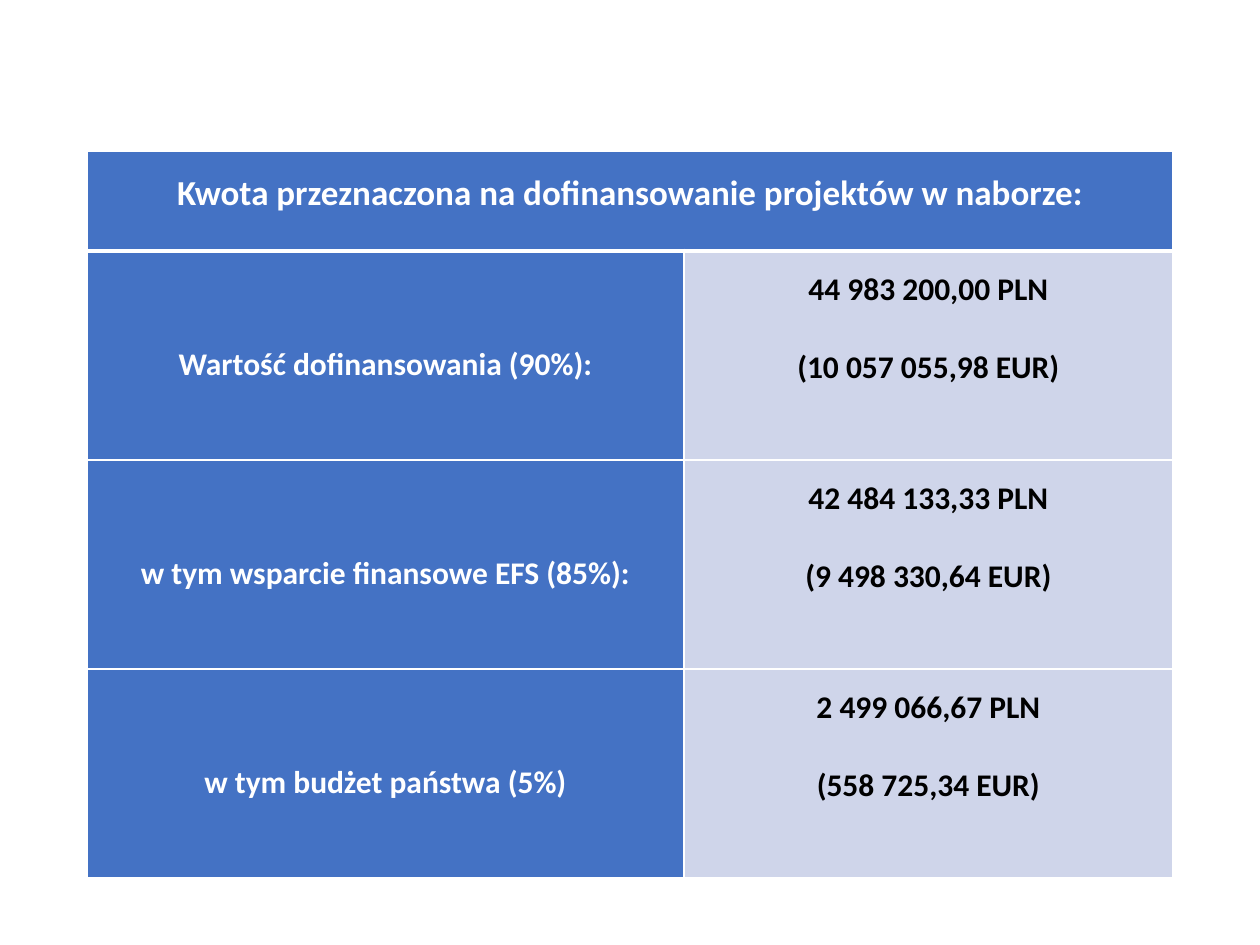
from lxml import etree
from pptx import Presentation
from pptx import util as u
from pptx.dml.color import RGBColor
from pptx.enum import text
from pptx.oxml.ns import qn

SCALE = 914400 // 126
WHITE, BLACK, BLUE, PALE = "FFFFFF", "000000", "4472C4", "CFD5EA"
LEFT, TOP = 87, 151
COLUMNS = [597, 489]
ROWS = [100, 209, 209, 209]
HEADING = "Kwota przeznaczona na dofinansowanie projektów w naborze:"
AMOUNTS = [
    ("Wartość dofinansowania (90%):", "44 983 200,00 PLN", "(10 057 055,98 EUR)"),
    ("w tym wsparcie finansowe EFS (85%):", "42 484 133,33 PLN", "(9 498 330,64 EUR)"),
    ("w tym budżet państwa (5%)", "2 499 066,67 PLN", "(558 725,34 EUR)"),
]


def px(length):
    return u.Emu(length * SCALE)


def colour(value):
    return RGBColor.from_string(value)


def set_borders(cell, bottom, top):
    properties = cell._tc.get_or_add_tcPr()
    widths = {"a:lnL": 1, "a:lnR": 1, "a:lnT": top, "a:lnB": bottom}
    for index, (tag, width) in enumerate(widths.items()):
        line = etree.Element(qn(tag), w=str(u.Pt(width)))
        fill = etree.SubElement(line, qn("a:solidFill"))
        etree.SubElement(fill, qn("a:srgbClr"), val=WHITE)
        properties.insert(index, line)


def fill_cell(cell, lines, fill, ink, size, anchor):
    cell.fill.solid()
    cell.fill.fore_color.rgb = colour(fill)
    cell.margin_left = cell.margin_right = px(9)
    cell.margin_top = cell.margin_bottom = 0
    cell.vertical_anchor = anchor
    cell.text_frame.text = "\n".join(lines)
    for index, para in enumerate(cell.text_frame.paragraphs):
        para.alignment = text.PP_ALIGN.CENTER
        para.line_spacing = 1.5
        para.space_before = u.Pt(6 if index else 0)
        para.space_after = u.Pt(6)
        for span in para.runs:
            span.font.name = "Calibri"
            span.font.size = u.Pt(size)
            span.font.bold = True
            span.font.color.rgb = colour(ink)


def add_funding_table(page):
    frame = page.shapes.add_table(len(ROWS), len(COLUMNS), px(LEFT), px(TOP),
                                  px(sum(COLUMNS)), px(sum(ROWS)))
    table = frame.table
    for column, width in zip(table.columns, COLUMNS):
        column.width = px(width)
    for row, height in zip(table.rows, ROWS):
        row.height = px(height)
    table.cell(0, 0).merge(table.cell(0, 1))
    fill_cell(table.cell(0, 0), [HEADING], BLUE, WHITE, 20, text.MSO_ANCHOR.TOP)
    for index, (label, *amounts) in enumerate(AMOUNTS, start=1):
        fill_cell(table.cell(index, 0), [label], BLUE, WHITE, 18, text.MSO_ANCHOR.MIDDLE)
        fill_cell(table.cell(index, 1), amounts, PALE, BLACK, 18, text.MSO_ANCHOR.TOP)
    for index, row in enumerate(table.rows):
        for cell in row.cells:
            set_borders(cell, bottom=3 if index == 0 else 1, top=3 if index == 1 else 1)


def main():
    deck = Presentation()
    deck.slide_width, deck.slide_height = px(1260), px(945)
    page = deck.slides.add_slide(deck.slide_layouts[6])
    add_funding_table(page)
    deck.save("out.pptx")


if __name__ == "__main__":
    main()
